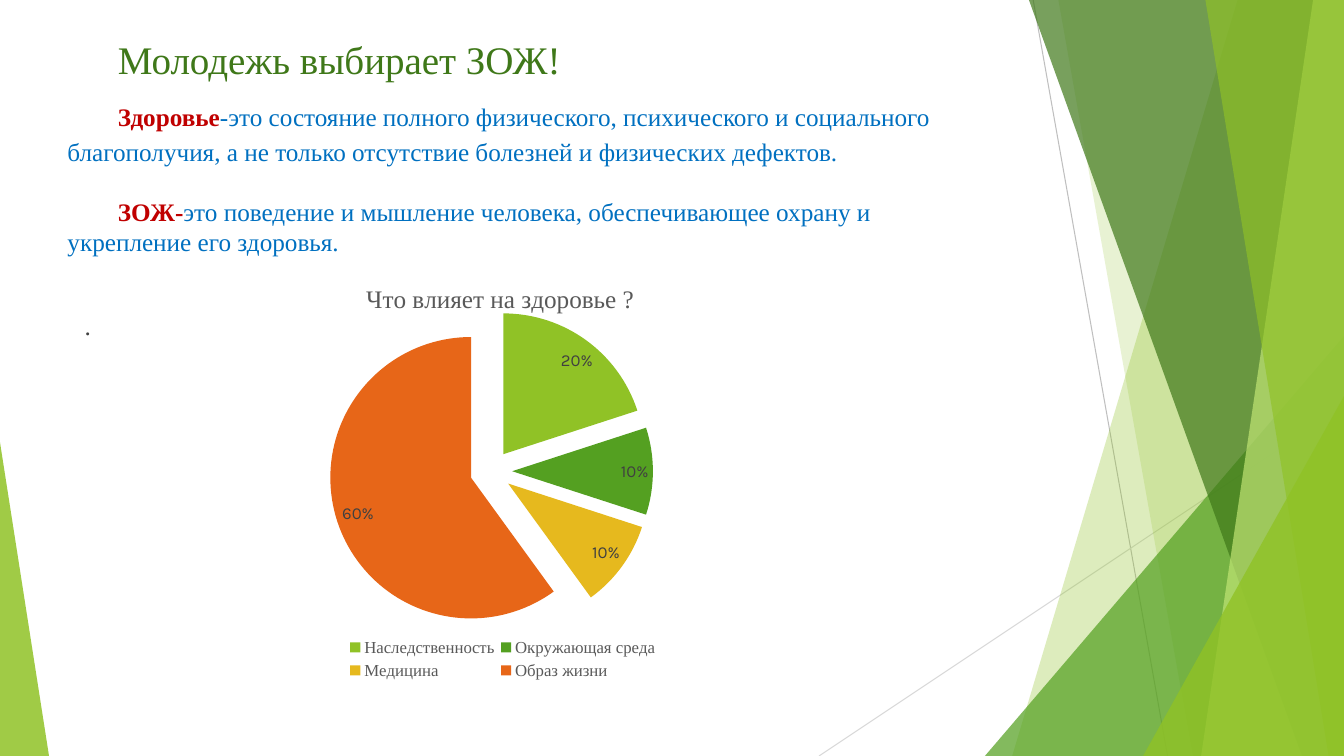
"""Build the slide on a healthy lifestyle, with its definitions and a pie of health factors."""
import pptx
import pptx.chart.data
import pptx.dml.color
import pptx.enum.chart
import pptx.enum.shapes
import pptx.enum.text
import pptx.oxml
import pptx.oxml.ns
import pptx.util

Pt = pptx.util.Pt
RGB = pptx.dml.color.RGBColor.from_string
THEME = {
    "lime": "90C226", "green": "54A021", "forest": "3F7819", "pale": "C0E474",
    "gold": "E6B91E", "orange": "E76618", "red": "C00000", "blue": "0070C0",
    "text": "404040", "muted": "595959", "line": "BFBFBF", "faint line": "D9D9D9",
    "serif": "Times New Roman", "sans": "Karla",
    "heading": 27.9, "body": 18, "small": 12,
}


def style(font, color, size, face="serif", bold=False):
    formats = {"name": THEME[face], "size": Pt(THEME[size]), "bold": bold}
    for attribute, value in formats.items():
        setattr(font, attribute, value)
    font.color.rgb = RGB(THEME[color])


def place(element, index, target, **fractions):
    for old in element.findall(pptx.oxml.ns.qn("c:layout")):
        element.remove(old)
    modes = "".join(f'<c:{side}Mode val="edge"/>' for side in "xy")
    values = "".join(f'<c:{key} val="{value}"/>' for key, value in fractions.items())
    element.insert(index, pptx.oxml.parse_xml(
        f'<c:layout {pptx.oxml.ns.nsdecls("c")}><c:manualLayout>'
        f'{target}{modes}{values}</c:manualLayout></c:layout>'))


deck = pptx.Presentation()
deck.slide_width, deck.slide_height = Pt(960), Pt(540)
slide = deck.slides.add_slide(deck.slide_layouts[5])

for x1, y1, x2, y2, color in [(738, 0, 834, 540, "line"), (960, 290, 585, 540, "faint line")]:
    ray = slide.shapes.add_connector(
        pptx.enum.shapes.MSO_CONNECTOR.STRAIGHT, Pt(x1), Pt(y1), Pt(x2), Pt(y2))
    ray.line.width = Pt(0.75)
    ray.line.color.rgb = RGB(THEME[color])
    ray.element.spPr.append(
        pptx.oxml.parse_xml(f'<a:effectLst {pptx.oxml.ns.nsdecls("a")}/>'))

facets = [
    ("band", (884, 723), "lime", 30),
    ("band", (756, 852), "lime", 20),
    ("corner", (703.5, 240, 256.5, 1), "green", 72),
    ("band", (735, 930), "forest", 70),
    ("band", (938, 858), "pale", 70),
    ("band", (861, 949), "lime", 65),
    ("corner", (816.5, 283, 143.5, 1), "lime", 80),
    ("corner", (0, 316, 35, 0), "lime", 85),
]
for kind, geometry, color, opacity in facets:
    if kind == "band":
        top_x, bottom_x = geometry
        outline = slide.shapes.build_freeform(top_x, 0, scale=Pt(1))
        outline.add_line_segments([(960, 0), (960, 540), (bottom_x, 540)])
        facet = outline.convert_to_shape()
    else:
        left, top, width, apex = geometry
        facet = slide.shapes.add_shape(
            pptx.enum.shapes.MSO_SHAPE.ISOSCELES_TRIANGLE,
            Pt(left), Pt(top), Pt(width), Pt(540 - top))
        facet.adjustments[0] = apex
    facet.shadow.inherit = False
    facet.line.fill.background()
    facet.fill.solid()
    facet.fill.fore_color.rgb = RGB(THEME[color])
    tint = facet.element.spPr.find(".//" + pptx.oxml.ns.qn("a:srgbClr"))
    tint.append(pptx.oxml.parse_xml(
        f'<a:alpha {pptx.oxml.ns.nsdecls("a")} val="{opacity * 1000}"/>'))

definitions = slide.shapes.title
title_box = {"left": Pt(41), "top": Pt(13.7), "width": Pt(677), "height": Pt(162.7)}
for attribute, value in title_box.items():
    setattr(definitions, attribute, value)
title_frame = {
    "word_wrap": True, "auto_size": pptx.enum.text.MSO_AUTO_SIZE.NONE,
    "vertical_anchor": pptx.enum.text.MSO_ANCHOR.TOP,
    "margin_top": Pt(11.5), "margin_bottom": Pt(0),
}
for attribute, value in title_frame.items():
    setattr(definitions.text_frame, attribute, value)

paragraphs = [
    (0, 1.0, [("Молодежь выбирает ЗОЖ!", "forest", "heading", False)]),
    (10, Pt(25), [
        ("Здоровье", "red", "body", True),
        ("-это состояние полного физического, психического и социального благополучия, "
         "а не только отсутствие болезней и физических дефектов.", "blue", "body", False)]),
    (21.4, Pt(21.4), [
        ("ЗОЖ", "red", "body", True),
        ("-", "red", "body", True),
        ("это поведение и мышление человека, обеспечивающее охрану и укрепление "
         "его здоровья.", "blue", "body", False)]),
]
for number, (gap, spacing, phrases) in enumerate(paragraphs):
    frame = definitions.text_frame
    paragraph = frame.add_paragraph() if number else frame.paragraphs[0]
    paragraph.alignment = pptx.enum.text.PP_ALIGN.LEFT
    paragraph.space_before = Pt(gap)
    paragraph.line_spacing = spacing
    properties = paragraph._p.get_or_add_pPr()
    properties.set("marL", "0")
    properties.set("indent", str(Pt(36)))
    for words, color, size, bold in phrases:
        run = paragraph.add_run()
        run.text = words
        style(run.font, color, size, bold=bold)

remark = slide.shapes.add_textbox(Pt(53.3), Pt(218.2), Pt(677), Pt(257))
remark.text_frame.word_wrap = True
remark.text_frame.text = "."
style(remark.text_frame.paragraphs[0].runs[0].font, "text", "body")

factors = pptx.chart.data.CategoryChartData(number_format="0%")
factors.categories = ["Наследственность", "Окружающая среда", "Медицина", "Образ жизни"]
factors.add_series("Series 1", [0.2, 0.1, 0.1, 0.6])
chart = slide.shapes.add_chart(
    pptx.enum.chart.XL_CHART_TYPE.PIE, Pt(149), Pt(184.3), Pt(420.5), Pt(304.6), factors).chart
chart.font.name = THEME["sans"]
chart.font.size = Pt(10)

chart.has_title = True
question = chart.chart_title.text_frame
question.text = "Что влияет на здоровье ?"
style(question.paragraphs[0].runs[0].font, "muted", "body")
chart.has_legend = True
chart.legend.position = pptx.enum.chart.XL_LEGEND_POSITION.BOTTOM
chart.legend.include_in_layout = False
style(chart.legend.font, "muted", "small")

pie = chart.plots[0]
pie.vary_by_categories = True
pie.has_data_labels = True
labels = pie.data_labels
label_formats = {
    "show_value": True, "show_percentage": False,
    "number_format": "0%", "number_format_is_linked": False,
    "position": pptx.enum.chart.XL_LABEL_POSITION.BEST_FIT,
}
for attribute, value in label_formats.items():
    setattr(labels, attribute, value)
style(labels.font, "text", "small", "sans")
for number, color in enumerate(["lime", "green", "gold", "orange"]):
    slice_fill = pie.series[0].points[number].format.fill
    slice_fill.solid()
    slice_fill.fore_color.rgb = RGB(THEME[color])
for slice_fill in chart.element.xpath(".//c:dPt/c:spPr"):
    slice_fill.addprevious(pptx.oxml.parse_xml(
        f'<c:explosion {pptx.oxml.ns.nsdecls("c")} val="15"/>'))

chart_space = chart.element
place(chart_space.xpath(".//c:plotArea")[0], 0, '<c:layoutTarget val="inner"/>',
      x=0.24, y=0.17, w=0.48, h=0.66)
place(chart_space.xpath("./c:chart/c:title")[0], 1, "", x=0.26, y=0.05)
place(chart_space.xpath(".//c:legend")[0], 1, "", x=0.23, y=0.88, w=0.54, h=0.12)

deck.save("out.pptx")
